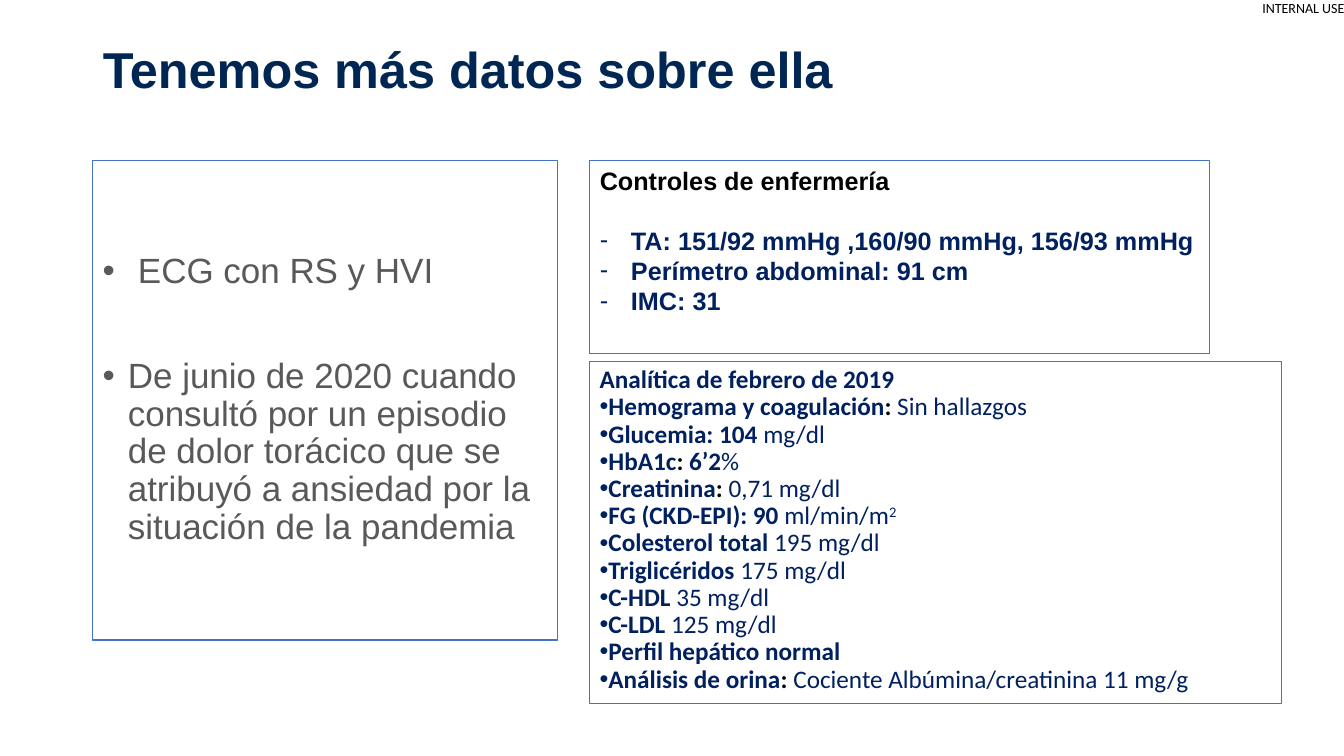
from dataclasses import dataclass

from lxml.etree import SubElement
from pptx import Presentation
from pptx.dml.color import RGBColor
from pptx.enum.text import MSO_ANCHOR, PP_ALIGN
from pptx.oxml.ns import qn
from pptx.util import Inches, Pt


@dataclass(frozen=True)
class Theme:
    title: str = "002754"
    navy: str = "002060"
    black: str = "000000"
    grey: str = "595959"
    border: str = "4472C4"
    sans: str = "Arial"
    humanist: str = "Calibri"
    title_size: float = 36
    body_size: float = 25
    data_size: float = 18
    label_size: float = 10


THEME = Theme()


@dataclass(frozen=True)
class Span:
    text: str
    bold: bool = True
    color: str = THEME.navy
    raised: bool = False


@dataclass(frozen=True)
class Line:
    spans: list[Span]
    bullet: str = ""
    indent: float = 0
    before: float = 0


def lab(name: str, value: str = "", colon: bool = False, strong: str = "") -> Line:
    """Bulleted result: bold name, optional black colon, bold and plain values."""
    spans = [Span(name)]
    if colon:
        spans.append(Span(": ", color=THEME.black))
    if strong:
        spans.append(Span(strong))
    if value:
        spans.append(Span(value, bold=False))
    return Line(spans, "•")


def note(text: str, indent: float, before: float = 0) -> Line:
    return Line([Span(text, False, THEME.grey)], "•", indent, before)


def control(text: str, before: float = 0) -> Line:
    return Line([Span(text)], "-", 0.31, before)


NOTES = [
    note("ECG con RS y HVI", 0.35),
    note("De junio de 2020 cuando consultó por un episodio de dolor torácico "
         "que se atribuyó a ansiedad por la situación de la pandemia", 0.25, 48),
]
CONTROLS = [
    Line([Span("Controles de enfermería", color=THEME.black)]),
    control("TA: 151/92 mmHg ,160/90 mmHg, 156/93 mmHg", 21),
    control("Perímetro abdominal: 91 cm"),
    control("IMC: 31"),
]
LABS = [
    Line([Span("Analítica de febrero de 2019")]),
    lab("Hemograma y coagulación", "Sin hallazgos", colon=True),
    lab("Glucemia: 104 ", "mg/dl"),
    lab("HbA1c", "%", colon=True, strong="6’2"),
    lab("Creatinina", "0,71 mg/dl", colon=True),
    Line([Span("FG (CKD-EPI): 90"), Span(" ml/min/m", False),
          Span("2", False, raised=True)], "•"),
    lab("Colesterol total ", "195 mg/dl"),
    lab("Triglicéridos ", "175 mg/dl"),
    lab("C-HDL ", "35 mg/dl"),
    lab("C-LDL ", "125 mg/dl"),
    lab("Perfil hepático normal"),
    lab("Análisis de orina", "Cociente Albúmina/creatinina 11 mg/g", colon=True),
]


def place(box, left: float, top: float, width: float, height: float) -> None:
    box.left, box.top = Inches(left), Inches(top)
    box.width, box.height = Inches(width), Inches(height)


def add_bullet(para, mark: str, indent: float) -> None:
    properties = para._p.get_or_add_pPr()
    properties.set("marL", str(Inches(indent)))
    properties.set("indent", str(-Inches(indent)))
    SubElement(properties, qn("a:buFont")).set("typeface", THEME.sans)
    SubElement(properties, qn("a:buChar")).set("char", mark)


def write(box, lines: list[Line], *, font: str, size: float, spacing: float = 1.0,
          align: PP_ALIGN = PP_ALIGN.LEFT, anchor: MSO_ANCHOR = MSO_ANCHOR.TOP,
          wrap: bool = True) -> None:
    frame = box.text_frame
    frame.word_wrap = wrap
    frame.vertical_anchor = anchor
    for index, line in enumerate(lines):
        para = frame.add_paragraph() if index else frame.paragraphs[0]
        if line.bullet:
            add_bullet(para, line.bullet, line.indent)
        para.alignment = align
        para.line_spacing = spacing
        if line.before:
            para.space_before = Pt(line.before)
        for item in line.spans:
            span = para.add_run()
            span.text = item.text
            span.font.name = font
            span.font.size = Pt(size)
            span.font.bold = item.bold
            span.font.color.rgb = RGBColor.from_string(item.color)
            if item.raised:
                span._r.get_or_add_rPr().set("baseline", "30000")


def add_panel(page, left: float, top: float, width: float, height: float):
    """Add an outlined text box."""
    box = page.shapes.add_textbox(Inches(left), Inches(top), Inches(width), Inches(height))
    box.line.color.rgb = RGBColor.from_string(THEME.border)
    box.line.width = Pt(0.75)
    return box


def main() -> None:
    deck = Presentation()
    deck.slide_width, deck.slide_height = Inches(13.33), Inches(7.5)
    page = deck.slides.add_slide(deck.slide_layouts[5])

    label = page.shapes.add_textbox(Inches(12.52), 0, Inches(0.85), Inches(0.17))
    frame = label.text_frame
    frame.margin_left = frame.margin_right = frame.margin_top = frame.margin_bottom = 0
    write(label, [Line([Span("INTERNAL USE", False, THEME.black)])],
          font=THEME.humanist, size=THEME.label_size, wrap=False)

    title = page.shapes.title
    place(title, 0.92, 0.4, 8.32, 0.64)
    write(title, [Line([Span("Tenemos más datos sobre ella", color=THEME.title)])],
          font=THEME.sans, size=THEME.title_size, spacing=0.9, anchor=MSO_ANCHOR.MIDDLE)

    write(add_panel(page, 0.92, 1.59, 4.61, 4.76), NOTES, font=THEME.sans,
          size=THEME.body_size, spacing=0.9, anchor=MSO_ANCHOR.MIDDLE)
    write(add_panel(page, 5.85, 3.59, 6.86, 3.39), LABS, font=THEME.humanist,
          size=THEME.data_size, spacing=0.9, align=PP_ALIGN.JUSTIFY)
    write(add_panel(page, 5.85, 1.59, 6.15, 1.92), CONTROLS, font=THEME.sans,
          size=THEME.data_size)

    deck.save("out.pptx")


if __name__ == "__main__":
    main()
